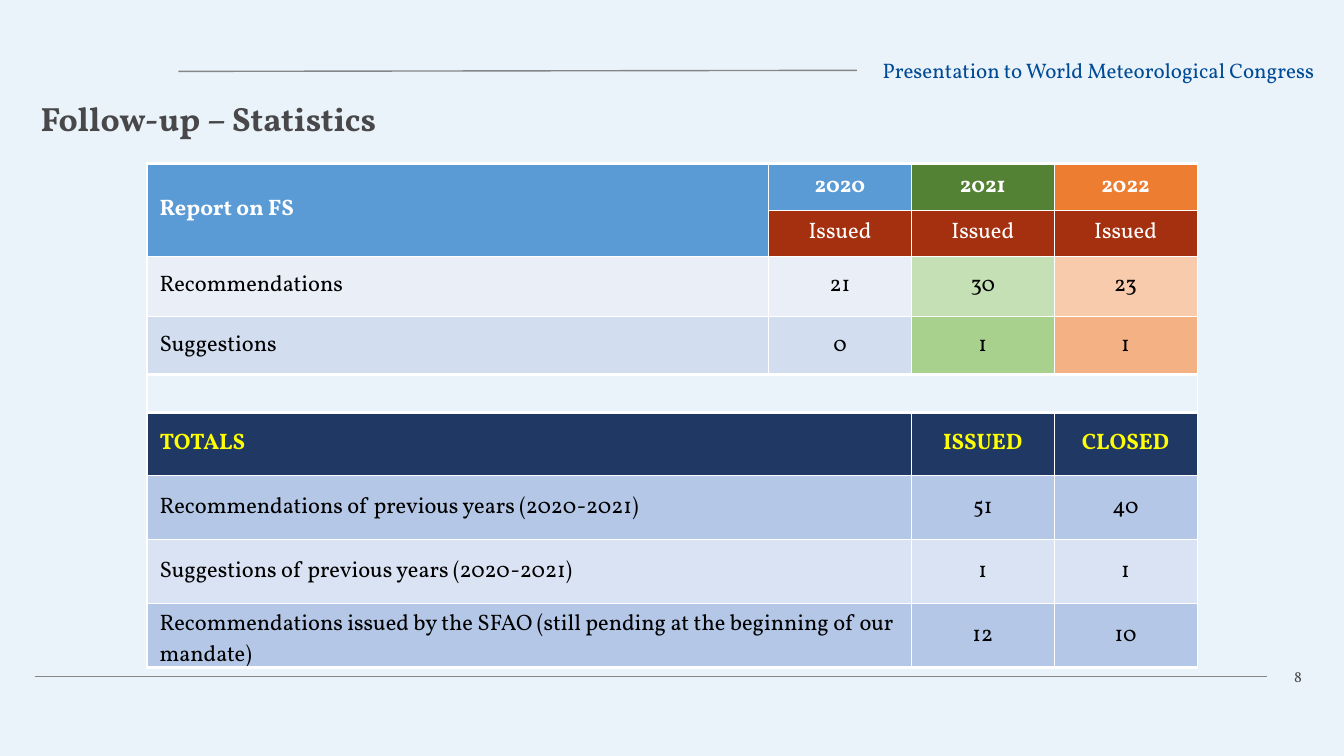
from lxml import etree
from pptx import Presentation
from pptx.dml.color import RGBColor
from pptx.enum.shapes import MSO_CONNECTOR
from pptx.enum.text import MSO_ANCHOR, PP_ALIGN
from pptx.oxml.ns import qn
from pptx.util import Pt

PX = 9525
LEFT, CENTER, RIGHT = PP_ALIGN.LEFT, PP_ALIGN.CENTER, PP_ALIGN.RIGHT
TOP, MIDDLE = MSO_ANCHOR.TOP, MSO_ANCHOR.MIDDLE
STRAIGHT = MSO_CONNECTOR.STRAIGHT


def color(value):
    return RGBColor.from_string(value)


def write(frame, text, size=16, ink="000000", bold=False, align=LEFT, spacing=None):
    para = frame.paragraphs[0]
    para.alignment = align
    para.line_spacing = spacing
    span = para.add_run()
    span.text = text
    span.font.name = "Vollkorn"
    span.font.size = Pt(size)
    span.font.bold = bold
    span.font.color.rgb = color(ink)


deck = Presentation()
deck.slide_width, deck.slide_height = 1280 * PX, 720 * PX
page = deck.slides.add_slide(deck.slide_layouts[5])
page.background.fill.solid()
page.background.fill.fore_color.rgb = color("EBF3FA")

# Footer and header rules
for x1, y1, x2, y2, width in [(33, 644, 1207, 644, 0.5), (170, 68, 816, 67, 1)]:
    rule = page.shapes.add_connector(STRAIGHT, x1 * PX, y1 * PX, x2 * PX, y2 * PX)
    rule.line.color.rgb = color("858688")
    rule.line.width = Pt(width)
    etree.SubElement(rule._element.spPr, qn("a:effectLst"))

# Title
title = page.shapes.title
title.left, title.top, title.width, title.height = 29 * PX, 99 * PX, 1223 * PX, 32 * PX
title.text_frame.word_wrap = True
title.text_frame.vertical_anchor = MIDDLE
write(title.text_frame, "Follow-up – Statistics", size=24, ink="48484A", bold=True, spacing=0.9)

# Header text and page number
labels = [
    ("Presentation to World Meteorological Congress", (816, 51, 436, 32), 15, "004B96", MIDDLE, 0),
    ("8", (1207, 631, 45, 25), 11, "48484A", TOP, 12),
]
for text, place, size, ink, anchor, right_inset in labels:
    box = page.shapes.add_textbox(*(length * PX for length in place))
    frame = box.text_frame
    frame.word_wrap = False
    frame.vertical_anchor = anchor
    frame.margin_left, frame.margin_right = 12 * PX, right_inset * PX
    frame.margin_top = frame.margin_bottom = 4 * PX
    write(frame, text, size=size, ink=ink, align=RIGHT)

# Table rows: height, texts, fills, text colour, bold
BLUE, RUST, NAVY, MID, PALE = "5B9BD5", "A53010", "203864", "B4C7E7", "DAE3F3"
rows = [
    (44, ["Report on FS", "2020", "2021", "2022"], [BLUE, BLUE, "548235", "ED7D31"], "FFFFFF", True),
    (44, [None, "Issued", "Issued", "Issued"], [BLUE] + [RUST] * 3, "FFFFFF", False),
    (57, ["Recommendations", "21", "30", "23"], ["EAEFF7", "EAEFF7", "C5E0B4", "F8CBAD"], "000000", False),
    (56, ["Suggestions", "0", "1", "1"], ["D2DEEF", "D2DEEF", "A9D18E", "F4B183"], "000000", False),
    (36, [None] * 4, [None] * 4, "000000", False),
    (60, ["TOTALS", None, "ISSUED", "CLOSED"], [NAVY] * 4, "FFFF00", True),
    (61, ["Recommendations of previous years (2020-2021)", None, "51", "40"], [MID] * 4, "000000", False),
    (61, ["Suggestions of previous years (2020-2021)", None, "1", "1"], [PALE] * 4, "000000", False),
    (61, ["Recommendations issued by the SFAO (still pending at the beginning of our mandate)",
          None, "12", "10"], [MID] * 4, "000000", False),
]
column_widths = [592, 136, 136, 136]
THICK_TOP, THICK_BOTTOM = (0, 4, 5), (3, 4, 8)

holder = page.shapes.add_table(len(rows), 4, 140 * PX, 156 * PX, sum(column_widths) * PX,
                               sum(row[0] for row in rows) * PX)
table = holder.table
table.first_row = table.horz_banding = False
for column, width in zip(table.columns, column_widths):
    column.width = width * PX

for r, (height, texts, fills, ink, bold) in enumerate(rows):
    table.rows[r].height = height * PX
    for c, (text, fill) in enumerate(zip(texts, fills)):
        cell = table.cell(r, c)
        # White borders, thick around each block
        thick = {"L": c == 0, "R": False, "T": r in THICK_TOP, "B": r in THICK_BOTTOM}
        for side, heavy in thick.items():
            border = etree.SubElement(cell._tc.get_or_add_tcPr(), qn("a:ln" + side),
                                      w=str(Pt(2.25 if heavy else 0.5)))
            paint = etree.SubElement(border, qn("a:solidFill"))
            etree.SubElement(paint, qn("a:srgbClr"), val="FFFFFF")
        if fill:
            cell.fill.solid()
            cell.fill.fore_color.rgb = color(fill)
        else:
            cell.fill.background()
        cell.vertical_anchor = MIDDLE
        cell.margin_left = cell.margin_right = 12 * PX
        cell.margin_top = cell.margin_bottom = (5 if fill else 0) * PX
        if text:
            write(cell.text_frame, text, ink=ink, bold=bold, align=CENTER if c else LEFT)

# Merged cells: the report heading, the gap row and the totals labels
merges = [(0, 0, 1, 0), (4, 0, 4, 3)] + [(r, 0, r, 1) for r in range(5, 9)]
for r1, c1, r2, c2 in merges:
    table.cell(r1, c1).merge(table.cell(r2, c2))

deck.save("out.pptx")
